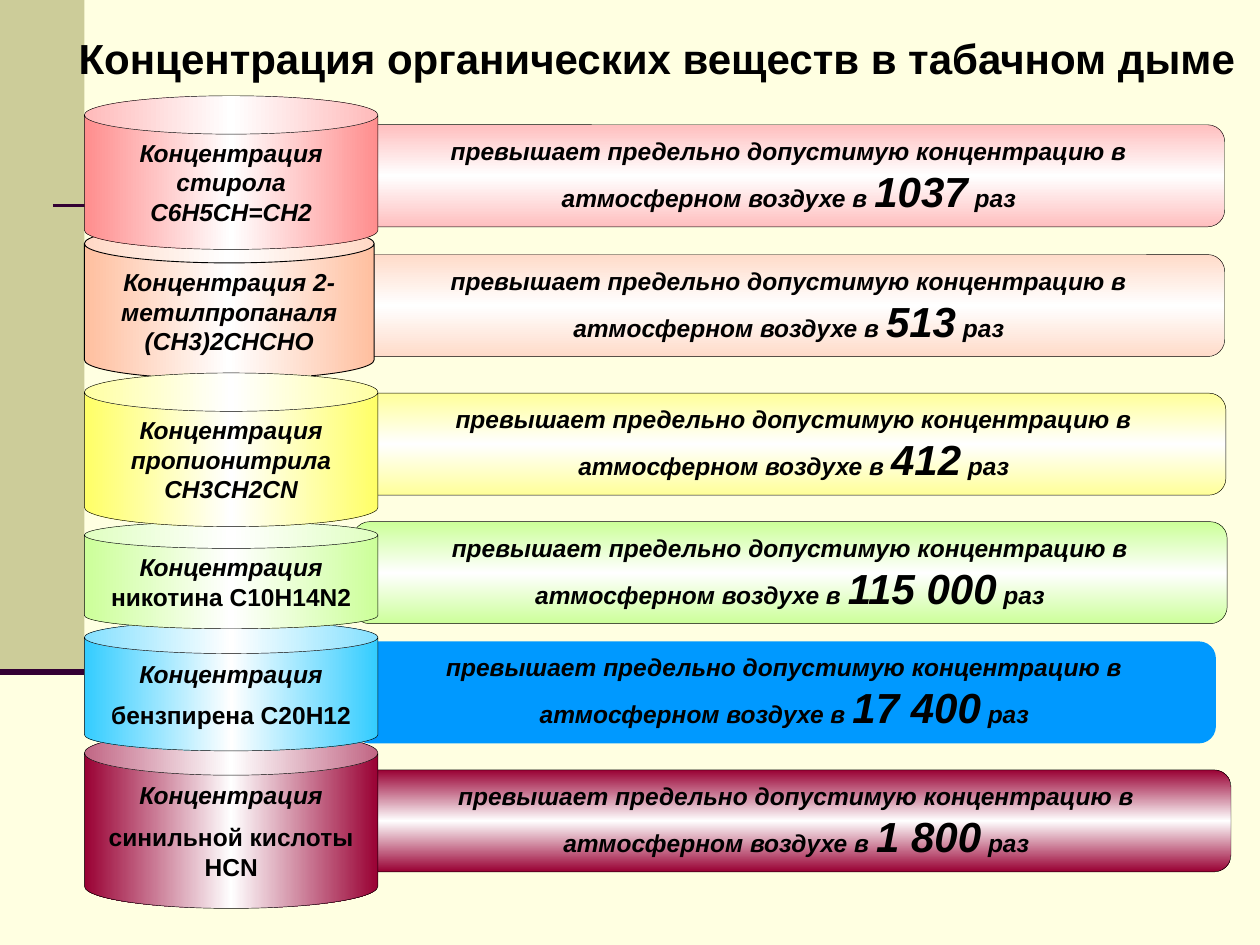
from copy import deepcopy

from lxml.etree import SubElement
from pptx import Presentation
from pptx.dml.color import RGBColor
from pptx.enum.shapes import MSO_CONNECTOR, MSO_SHAPE
from pptx.enum.text import MSO_ANCHOR, MSO_AUTO_SIZE, PP_ALIGN
from pptx.oxml.ns import qn
from pptx.util import Inches, Pt

TITLE = "Концентрация органических веществ в табачном дыме"
EXCESS = "превышает предельно допустимую концентрацию в атмосферном воздухе в "
CAN_LEFT, BAR_HEIGHT = 0.67, 0.81

SUBSTANCES = [
    ((5.8, 2.33, 1.41, "990033", 0.25,
      [[("Концентрация", True)], [("синильной кислоты HCN", False)]]),
     (2.87, 6.11, 6.9, "990033", True, "1 800")),
    ((4.93, 2.33, 1.03, "33CCFF", 0.25,
      [[("Концентрация", True)], [("бензпирена С20Н12", False)]]),
     (2.8, 5.09, 6.85, "0099FF", False, "17 400")),
    ((4.14, 2.33, 0.85, "CCFF99", 0.25,
      [[("Концентрация ", True), ("никотина С10Н14N2", False)]]),
     (2.8, 4.14, 6.94, "CCFF99", True, "115 000")),
    ((1.78, 2.3, 1.23, "FFBF9F", 0.5,
      [[("Концентрация 2-метилпропаналя (СН3)2СНСНО", True)]]),
     (2.8, 2.02, 6.92, "FFDBC9", True, "513")),
    ((2.96, 2.33, 1.22, "FFFF66", 0.25,
      [[("Концентрация пропионитрила СН3СН2СN", True)]]),
     (2.87, 3.12, 6.86, "FFFF99", True, "412")),
    ((0.76, 2.33, 1.22, "FF8D8D", 0.25,
      [[("Концентрация стирола С6Н5СН=СН2", True)]]),
     (2.8, 0.99, 6.92, "FFBFBF", True, "1037")),
]


def color(value):
    return RGBColor.from_string(value)


class SmokeSlide:
    """Holds the text style and the current slide and draws its elements."""

    font = {"name": "Arial", "size": Pt(14), "bold": True, "italic": True}
    frame = {"word_wrap": True, "vertical_anchor": MSO_ANCHOR.MIDDLE,
             "auto_size": MSO_AUTO_SIZE.SHAPE_TO_FIT_TEXT}

    def __init__(self, slide):
        self.slide = slide
        background = slide.background.fill
        background.solid()
        background.fore_color.rgb = color("FFFFE1")

    def label(self, holder, paragraphs):
        text = holder.text_frame
        for name, value in self.frame.items():
            setattr(text, name, value)
        for index, runs in enumerate(paragraphs):
            paragraph = text.add_paragraph() if index else text.paragraphs[0]
            paragraph.alignment = PP_ALIGN.CENTER
            if index:
                paragraph.space_before = Pt(7)
            for words, changes in runs:
                run = paragraph.add_run()
                run.text = words
                for name, value in (self.font | changes).items():
                    setattr(run.font, name, value)
                run.font.color.rgb = color("000000")

    def title(self, words, box):
        heading = self.slide.shapes.title
        heading.left, heading.top, heading.width, heading.height = map(Inches, box)
        self.label(heading, [[(words, {"size": Pt(24), "italic": False})]])
        self.slide.shapes._spTree.append(heading._element)

    def rule(self, left, right, top, weight):
        connector = self.slide.shapes.add_connector(
            MSO_CONNECTOR.STRAIGHT, *map(Inches, (left, top, right, top)))
        connector.line.color.rgb = color("330033")
        connector.line.width = Pt(weight)
        SubElement(connector._element.spPr, qn("a:effectLst"))

    def shape(self, kind, box, fill, weight=0):
        figure = self.slide.shapes.add_shape(kind, *map(Inches, box))
        figure.shadow.inherit = False
        figure.fill.solid()
        figure.fill.fore_color.rgb = color(fill)
        if weight:
            figure.line.color.rgb = color("000000")
            figure.line.width = Pt(weight)
        else:
            figure.line.fill.background()
        return figure

    def shine(self, figure, edge, angle):
        figure.fill.gradient()
        figure.fill.gradient_angle = angle
        stops = figure._element.spPr.find(qn("a:gradFill")).find(qn("a:gsLst"))
        stops.append(deepcopy(stops[0]))
        for stop, position, tint in zip(
                figure.fill.gradient_stops, (0, 0.5, 1), (edge, "FFFFFF", edge)):
            stop.position = position
            stop.color.rgb = color(tint)

    def bar(self, left, top, width, fill, gradient, amount):
        figure = self.shape(MSO_SHAPE.ROUNDED_RECTANGLE,
                            (left, top, width, BAR_HEIGHT), fill,
                            0.25 if gradient else 0)
        if gradient:
            self.shine(figure, fill, 90)
        self.label(figure, [[(EXCESS, {}), (amount, {"size": Pt(24)}), (" раз", {})]])

    def can(self, top, width, height, fill, weight, paragraphs):
        figure = self.shape(MSO_SHAPE.CAN, (CAN_LEFT, top, width, height), fill, weight)
        self.shine(figure, fill, 0)
        self.label(figure, [[(words, {"italic": italic}) for words, italic in runs]
                            for runs in paragraphs])


def main():
    deck = Presentation()
    deck.slide_width, deck.slide_height = Inches(10), Inches(7.5)
    page = SmokeSlide(deck.slides.add_slide(deck.slide_layouts[5]))
    page.shape(MSO_SHAPE.RECTANGLE, (0, 0, CAN_LEFT, 5.33), "CCCC99")
    page.rule(0.42, 9.5, 1.63, 1.5)
    page.rule(0, CAN_LEFT, 5.33, 3.5)
    for _, bar in SUBSTANCES:
        page.bar(*bar)
    for can, _ in SUBSTANCES:
        page.can(*can)
    page.title(TITLE, (0.43, 0.21, 9.57, 0.5))
    deck.save("out.pptx")


if __name__ == "__main__":
    main()
